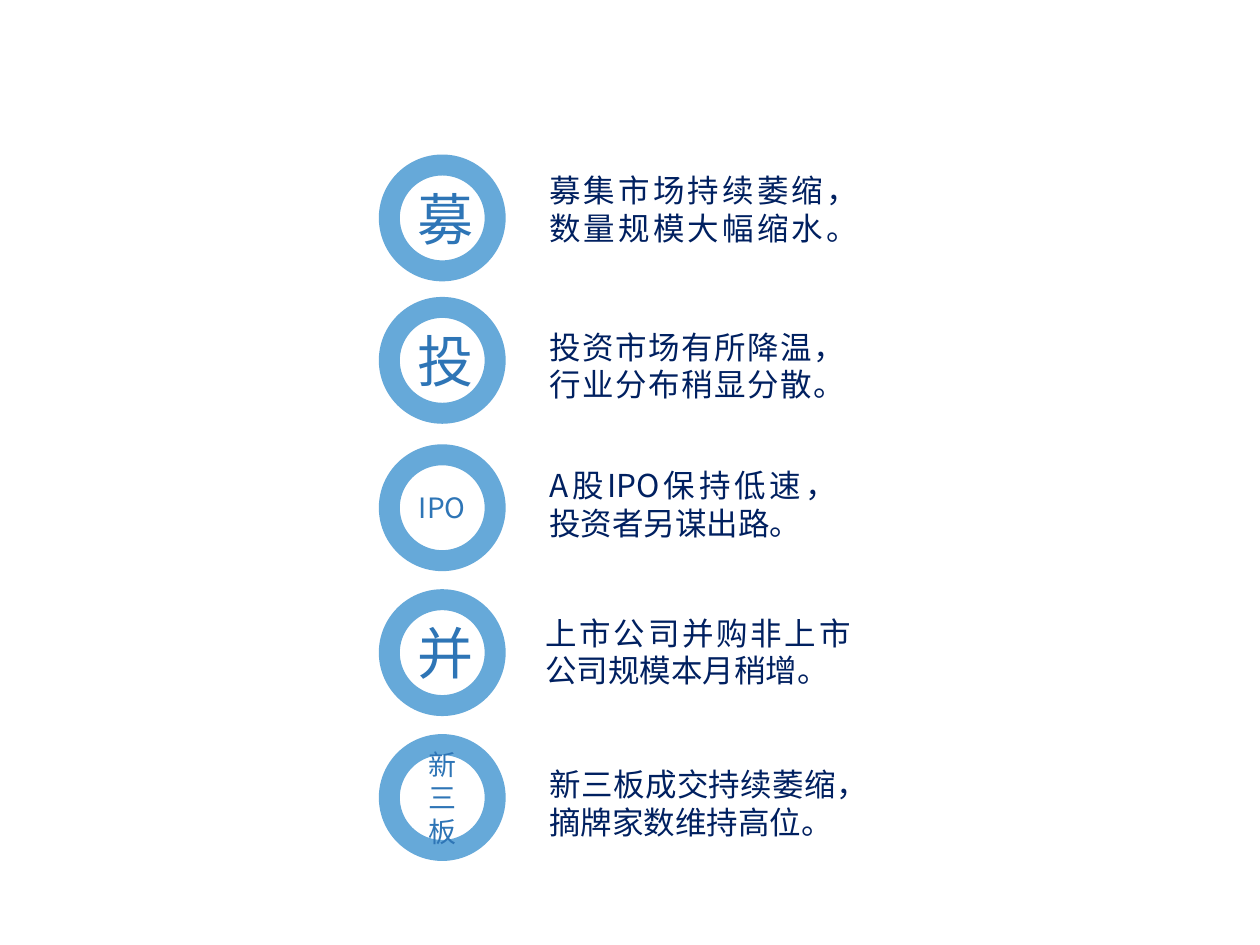
from dataclasses import dataclass

from lxml.etree import SubElement
from pptx import Presentation
from pptx.dml.color import RGBColor
from pptx.enum.shapes import MSO_SHAPE
from pptx.enum.text import MSO_ANCHOR, MSO_AUTO_SIZE, PP_ALIGN
from pptx.oxml.ns import qn
from pptx.util import Inches, Pt


@dataclass(frozen=True)
class Theme:
    ring: RGBColor = RGBColor(0x00, 0x70, 0xC0)
    label: RGBColor = RGBColor(0x2E, 0x75, 0xB6)
    body: RGBColor = RGBColor(0x00, 0x20, 0x60)
    label_font: str = "Noto Sans CJK JP"
    body_font: str = "Noto Sans CJK SC"
    large_size: int = 32
    small_size: int = 16
    body_size: int = 18
    ring_width: int = 12
    ring_opacity: int = 60


class SlideBuilder:
    """Holds the theme and the current slide."""

    def __init__(self, slide, theme):
        self.slide = slide
        self.theme = theme

    def set_text(self, shape, text, font_name, size, color, alignment):
        paragraph = shape.text_frame.paragraphs[0]
        paragraph.text = text
        paragraph.alignment = alignment
        font = paragraph.font
        font.size = Pt(size)
        font.color.rgb = color
        font.name = font_name
        # Chinese characters take the East Asian typeface
        properties = paragraph._p.pPr.find(qn("a:defRPr"))
        SubElement(properties, qn("a:ea"), typeface=font_name)

    def add_ring(self, left, top, diameter, label):
        theme = self.theme
        shape = self.slide.shapes.add_shape(
            MSO_SHAPE.OVAL, Inches(left), Inches(top), Inches(diameter), Inches(diameter))
        shape.shadow.inherit = False
        shape.fill.background()
        shape.line.color.rgb = theme.ring
        shape.line.width = Pt(theme.ring_width)
        color = shape.line._ln.find(".//" + qn("a:srgbClr"))
        SubElement(color, qn("a:alpha"), val=str(theme.ring_opacity * 1000))
        shape.text_frame.vertical_anchor = MSO_ANCHOR.MIDDLE
        size = theme.large_size if len(label) == 1 else theme.small_size
        self.set_text(shape, label, theme.label_font, size, theme.label, PP_ALIGN.CENTER)

    def add_statement(self, left, top, width, height, text):
        theme = self.theme
        box = self.slide.shapes.add_textbox(
            Inches(left), Inches(top), Inches(width), Inches(height))
        box.text_frame.word_wrap = True
        box.text_frame.auto_size = MSO_AUTO_SIZE.SHAPE_TO_FIT_TEXT
        self.set_text(box, text, theme.body_font, theme.body_size, theme.body, PP_ALIGN.JUSTIFY)


RING_LEFT, RING_DIAMETER = 3.09, 0.84
STATEMENT_HEIGHT = 0.71

# Ring label, ring top, statement left, top, width and text
TOPICS = [
    ("募", 1.31, 4.26, 1.31, 2.40, "募集市场持续萎缩，数量规模大幅缩水。"),
    ("投", 2.44, 4.26, 2.55, 2.30, "投资市场有所降温，行业分布稍显分散。"),
    ("IPO", 3.61, 4.26, 3.65, 2.48, "A股IPO保持低速，投资者另谋出路。"),
    ("并", 4.76, 4.23, 4.82, 2.62, "上市公司并购非上市公司规模本月稍增。"),
    ("新三板", 5.91, 4.26, 6.02, 2.48, "新三板成交持续萎缩，摘牌家数维持高位。"),
]


def main():
    presentation = Presentation()
    presentation.slide_width = Inches(10)
    presentation.slide_height = Inches(7.5)
    slide = presentation.slides.add_slide(presentation.slide_layouts[6])
    builder = SlideBuilder(slide, Theme())

    # One ring and one statement per topic
    for label, ring_top, left, top, width, text in TOPICS:
        builder.add_ring(RING_LEFT, ring_top, RING_DIAMETER, label)
        builder.add_statement(left, top, width, STATEMENT_HEIGHT, text)

    presentation.save("out.pptx")


if __name__ == "__main__":
    main()
